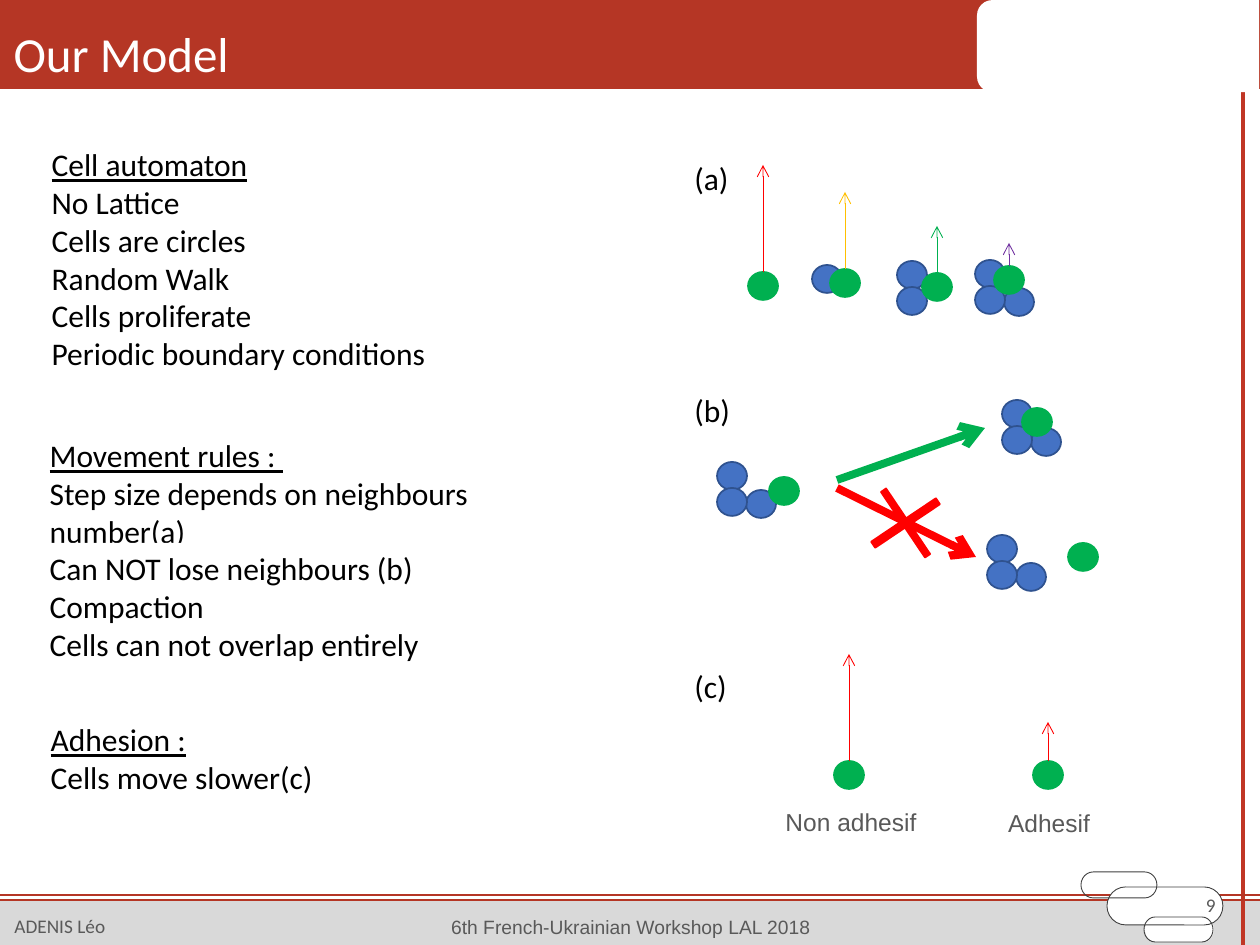
from lxml import etree
from pptx import Presentation
from pptx.dml.color import RGBColor
from pptx.enum.shapes import MSO_CONNECTOR, MSO_SHAPE
from pptx.enum.text import MSO_ANCHOR, MSO_AUTO_SIZE, PP_ALIGN
from pptx.oxml.ns import qn
from pptx.util import Emu, Pt

COLORS = {
    "brick": "B53625", "rule": "C03625", "band": "D9D9D9", "white": "FFFFFF",
    "black": "000000", "grey": "595959", "outline": "404040",
    "blue": "4472C4", "navy": "2F528F", "green": "00B050",
    "red": "FF0000", "amber": "FFC000", "purple": "7030A0",
}
TITLE = "Our Model"

# Text lists: box, has an underlined heading, lines
LISTS = [
    ((39, 139, 450, 242), True,
     ["Cell automaton", "No Lattice", "Cells are circles", "Random Walk",
      "Cells proliferate", "Periodic boundary conditions"]),
    ((37, 430, 478, 127), True,
     ["Movement rules : ", "Step size depends on neighbours number(a)"]),
    ((37, 543, 486, 127), False,
     ["Can NOT lose neighbours (b)", "Compaction", "Cells can not overlap entirely"]),
    ((38, 714, 476, 89), True, ["Adhesion :", "Cells move slower(c)"]),
]

# Blue neighbours, as offsets from the first one
NONE, ONE = [], [(0, 0)]
TWO = [(0, 0), (0, 26)]
THREE = [(0, 0), (29, 28), (0, 26)]

# Cell groups: neighbours, their origin, green cell, step tip, step colour
CLUSTERS = [
    (NONE, None, (763, 286), 165, "red"),
    (ONE, (827, 279), (845, 283), 192, "amber"),
    (TWO, (912, 275), (937, 287), 226, "green"),
    (THREE, (990, 274), (1009, 280), 243, "purple"),
    (THREE, (732, 476), (784, 491), None, None),
    (THREE, (1017, 414), (1037, 422), None, None),
    (THREE, (1002, 549), (1083, 557), None, None),
    (NONE, None, (849, 775), 654, "red"),
    (NONE, None, (1048, 775), 722, "red"),
]
CELL_W, CELL_H = 30, 28
MOVES = [((837, 480), (985, 428), "green"), ((837, 488), (976, 557), "red")]

# Labels: text, box, size, font, colour, alignment
PANEL_LABELS = [
    (text, (682, top, 115, 50), 18, "Calibri", "black", PP_ALIGN.LEFT)
    for text, top in (("(a)", 153), ("(b)", 385), ("(c)", 661))
]
CELL_LABELS = [
    ("Adhesif", (983, 802, 132, 43), 14, "Arial", "grey", PP_ALIGN.CENTER),
    ("Non adhesif", (742, 801, 218, 43), 14, "Arial", "grey", PP_ALIGN.CENTER),
]
FOOTER = [
    ("ADENIS Léo", (2, 908, 117, 36), 11, "Calibri", "grey", PP_ALIGN.LEFT),
    ("6th French-Ukrainian Workshop LAL 2018", (406, 909, 450, 36),
     11, "Arial", "grey", PP_ALIGN.CENTER),
    ("9", (935, 887, 293, 36), 11, "Calibri", "grey", PP_ALIGN.RIGHT),
]


def px(value):
    return Emu(round(value * 914400 / 126))


def rgb(name):
    return RGBColor.from_string(COLORS[name])


def add_block(preset, box, fill=None, line=None, width=1):
    block = slide.shapes.add_shape(preset, *map(px, box))
    block.shadow.inherit = False
    if fill:
        block.fill.solid()
        block.fill.fore_color.rgb = rgb(fill)
    else:
        block.fill.background()
    if line:
        block.line.color.rgb = rgb(line)
        block.line.width = Pt(width)
    else:
        block.line.fill.background()
    return block


def add_line(start, end, color, width, arrow=False):
    line = slide.shapes.add_connector(MSO_CONNECTOR.STRAIGHT, *map(px, start + end))
    line.line.color.rgb = rgb(color)
    line.line.width = Pt(width)
    if arrow:
        etree.SubElement(line.line._get_or_add_ln(), qn("a:tailEnd"), type="arrow")
    etree.SubElement(line._element.spPr, qn("a:effectLst"))
    return line


def style(paragraph, size, font, color, align=PP_ALIGN.LEFT, underline=False):
    paragraph.alignment = align
    for run in paragraph.runs:
        run.font.size, run.font.name = Pt(size), font
        run.font.bold, run.font.underline = False, underline
        run.font.color.rgb = rgb(color)


def add_label(text, box, size, font, color, align):
    label = slide.shapes.add_textbox(*map(px, box))
    label.text_frame.word_wrap = True
    label.text_frame.text = text
    style(label.text_frame.paragraphs[0], size, font, color, align)
    return label


def place(holder, box, anchor):
    holder.left, holder.top, holder.width, holder.height = map(px, box)
    holder.text_frame.vertical_anchor = anchor
    holder.text_frame.auto_size = MSO_AUTO_SIZE.NONE


def fill_list(holder, box, has_heading, lines):
    place(holder, box, MSO_ANCHOR.TOP)
    holder.fill.solid()
    holder.fill.fore_color.rgb = rgb("white")
    holder.text_frame.text = "\n".join(lines)
    for i, paragraph in enumerate(holder.text_frame.paragraphs):
        paragraph.space_before = Pt(0)
        props = paragraph._p.get_or_add_pPr()
        props.set("marL", "0")
        props.set("indent", "0")
        etree.SubElement(props, qn("a:buNone"))
        style(paragraph, 18, "Calibri", "black", underline=has_heading and i == 0)


def add_cell(center, fill, line):
    x, y = center
    box = (x - CELL_W / 2, y - CELL_H / 2, CELL_W, CELL_H)
    return add_block(MSO_SHAPE.OVAL, box, fill, line)


prs = Presentation()
prs.slide_width, prs.slide_height = px(1260), px(945)
slide = prs.slides.add_slide(prs.slide_layouts.get_by_name("Comparison"))
title, *bodies = slide.placeholders

# Page frame
add_block(MSO_SHAPE.RECTANGLE, (0, 900, 1260, 45), "band")
add_line((1243, 0), (1243, 945), "rule", 2)
add_block(MSO_SHAPE.RECTANGLE, (0, 0, 1260, 89), "brick")
corner = add_block(MSO_SHAPE.ROUND_2_SAME_RECTANGLE, (1072, -95, 92, 282), "white")
corner.rotation = 270
for y in (895, 900):
    add_line((0, y), (1260, y), "brick", 1)
for box, fill, line in [
    ((1145, 917, 69, 25), "white", None),
    ((1107, 887, 116, 38), "white", "outline"),
    ((1081, 872, 76, 26), None, "outline"),
    ((1144, 917, 69, 25), None, "outline"),
]:
    add_block(MSO_SHAPE.FLOWCHART_TERMINATOR, box, fill, line, 0.5)
for entry in FOOTER:
    add_label(*entry).text_frame.vertical_anchor = MSO_ANCHOR.MIDDLE

# Title, brought in front of the header band
title._element.getparent().append(title._element)
place(title, (1, 8, 961, 89), MSO_ANCHOR.MIDDLE)
title.text_frame.text = TITLE
style(title.text_frame.paragraphs[0], 28, "Calibri", "white")

# Lists
for holder, entry in zip(bodies, LISTS):
    fill_list(holder, *entry)

# Cells and their steps
for offsets, origin, center, tip, color in CLUSTERS:
    for dx, dy in offsets:
        add_cell((origin[0] + dx, origin[1] + dy), "blue", "navy")
    cell = add_cell(center, "green", "green")
    if tip is not None:
        x, y = center
        step = add_line((x, y - CELL_H / 2), (x, tip), color, 0.5, arrow=True)
        step.begin_connect(cell, 0)

# Allowed and forbidden moves
for start, end, color in MOVES:
    add_line(start, end, color, 4.5, arrow=True)
cross = add_block(MSO_SHAPE.CROSS, (866, 484, 79, 78), "red", "red")
cross.adjustments[0] = 0.46
cross.rotation = 56.1

# Labels
for entry in PANEL_LABELS + CELL_LABELS:
    add_label(*entry)

prs.save("out.pptx")
